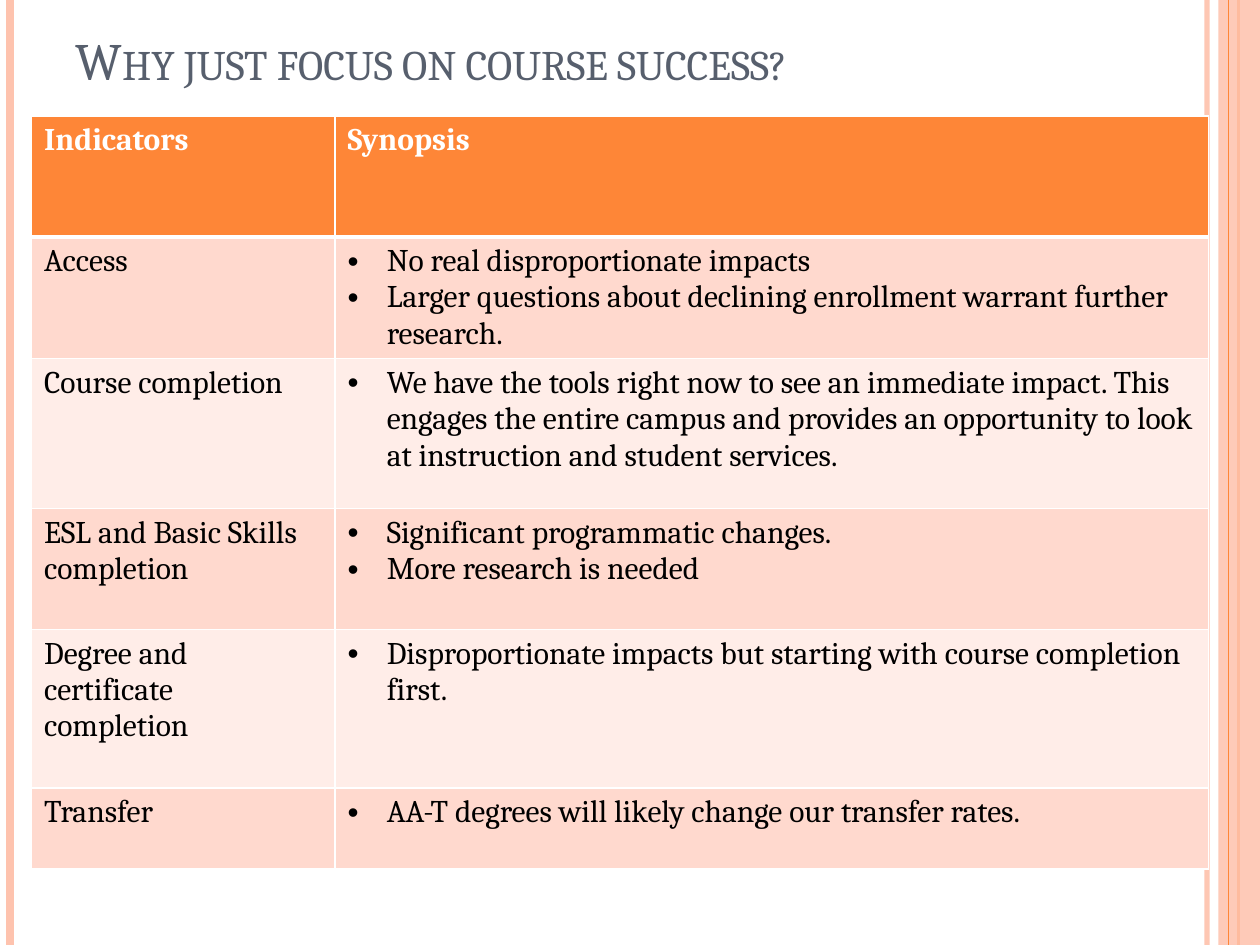
from lxml import etree
from pptx import Presentation
from pptx.dml.color import RGBColor
from pptx.enum import shapes, text
from pptx.oxml.ns import qn
from pptx.util import Inches, Pt

HUES = {"orange": "FE8637", "peach": "FEC3AE", "slate": "575F6D", "white": "FFFFFF",
        "black": "000000", "dark": "FFD9CE", "light": "FFEDE8"}
FONT = "Cambria"
TALL = 7.5

# x, colour, width in points, opacity in percent
RULES = [(9.58, "peach", 3, 93), (0.08, "peach", 4.5, 100),
         (9.83, "orange", 1.5, 100), (9.75, "orange", 0.75, 100)]

COLS = [2.41, 6.93]
HIGHS = [0.96, 0.96, 1.19, 0.96, 1.26, 0.64]
HEAD = ["Indicators", "Synopsis"]
ROWS = [
    ("Access", ["No real disproportionate impacts",
                "Larger questions about declining enrollment warrant further research."]),
    ("Course completion", ["We have the tools right now to see an immediate impact. "
                           "This engages the entire campus and provides an opportunity "
                           "to look at instruction and student services."]),
    ("ESL and Basic Skills completion", ["Significant programmatic changes.",
                                         "More research is needed"]),
    ("Degree and certificate completion", ["Disproportionate impacts but starting with "
                                           "course completion first."]),
    ("Transfer", ["AA-T degrees will likely change our transfer rates."]),
]


def hue(name):
    return RGBColor.from_string(HUES[name])


def sub(node, tag, **attrs):
    return etree.SubElement(node, qn(tag), attrs)


def fade(node, pct):
    """Set the opacity of the first colour inside node."""
    if pct < 100:
        sub(next(node.iter(qn("a:srgbClr"))), "a:alpha", val=str(pct * 1000))


class Deck:
    def __init__(self):
        self.prs = Presentation()
        self.prs.slide_width, self.prs.slide_height = Inches(10), Inches(TALL)
        self.slide = self.prs.slides.add_slide(self.prs.slide_layouts[5])

    def style(self, run, color, **fmt):
        for key, val in {"name": FONT, **fmt}.items():
            setattr(run.font, key, val)
        run.font.color.rgb = hue(color)

    def rule(self, x, color, width, pct):
        """Draw a vertical line over the full slide height."""
        line = self.slide.shapes.add_connector(
            shapes.MSO_CONNECTOR.STRAIGHT, Inches(x), 0, Inches(x), Inches(TALL))
        line.line.color.rgb = hue(color)
        line.line.width = Pt(width)
        props = line._element.spPr
        fade(props, pct)
        sub(props, "a:effectLst")

    def band(self, x, width, color, pct):
        """Draw a vertical bar over the full slide height."""
        bar = self.slide.shapes.add_shape(
            shapes.MSO_SHAPE.RECTANGLE, Inches(x), 0, Inches(width), Inches(TALL))
        bar.shadow.inherit = False
        bar.fill.solid()
        bar.fill.fore_color.rgb = hue(color)
        bar.line.fill.background()
        fade(bar._element.spPr, pct)

    def title(self, words):
        box = self.slide.shapes.title
        place = {"left": 0.5, "top": 0.17, "width": 8.17, "height": 1.25}
        for key, val in place.items():
            setattr(box, key, Inches(val))
        frame = box.text_frame
        frame.text = words
        frame.vertical_anchor = text.MSO_ANCHOR.TOP
        para = frame.paragraphs[0]
        para.alignment = text.PP_ALIGN.LEFT
        run = para.runs[0]
        self.style(run, "slate", size=Pt(30))
        run._r.get_or_add_rPr().set("cap", "small")
        self.slide.shapes._spTree.append(box._element)

    def edges(self, cell, widths):
        props = cell._tc.get_or_add_tcPr()
        for side, width in widths.items():
            line = sub(props, f"a:ln{side}", w=str(Pt(width)))
            sub(sub(line, "a:solidFill"), "a:srgbClr", val=HUES["white"])

    def cell(self, cell, lines, fill, color="black", bold=False, dots=False, top=1, base=1):
        self.edges(cell, {"L": 1, "R": 1, "T": top, "B": base})
        cell.fill.solid()
        cell.fill.fore_color.rgb = hue(fill)
        cell.text = "\n".join(lines)
        for para in cell.text_frame.paragraphs:
            self.style(para.runs[0], color, size=Pt(18), bold=bold)
            if dots:
                props = para._p.get_or_add_pPr()
                props.set("marL", str(Inches(0.31)))
                props.set("indent", str(-Inches(0.31)))
                sub(props, "a:buFont", typeface="Arial")
                sub(props, "a:buChar", char="•")

    def table(self, x, y):
        grid = self.slide.shapes.add_table(
            len(HIGHS), len(COLS), Inches(x), Inches(y),
            Inches(sum(COLS)), Inches(sum(HIGHS))).table
        for col, width in zip(grid.columns, COLS):
            col.width = Inches(width)
        for row, high in zip(grid.rows, HIGHS):
            row.height = Inches(high)
        for c, word in enumerate(HEAD):
            self.cell(grid.cell(0, c), [word], "orange", "white", bold=True, base=3)
        for r, (name, notes) in enumerate(ROWS, 1):
            fill = "dark" if r % 2 else "light"
            top = 3 if r == 1 else 1
            self.cell(grid.cell(r, 0), [name], fill, top=top)
            self.cell(grid.cell(r, 1), notes, fill, dots=True, top=top)


def main():
    deck = Deck()
    for rule in RULES[:3]:
        deck.rule(*rule)
    deck.band(9.67, 0.33, "peach", 87)
    deck.rule(*RULES[3])
    deck.title("Why just focus on course success?")
    deck.table(0.25, 0.92)
    deck.prs.save("out.pptx")


if __name__ == "__main__":
    main()
